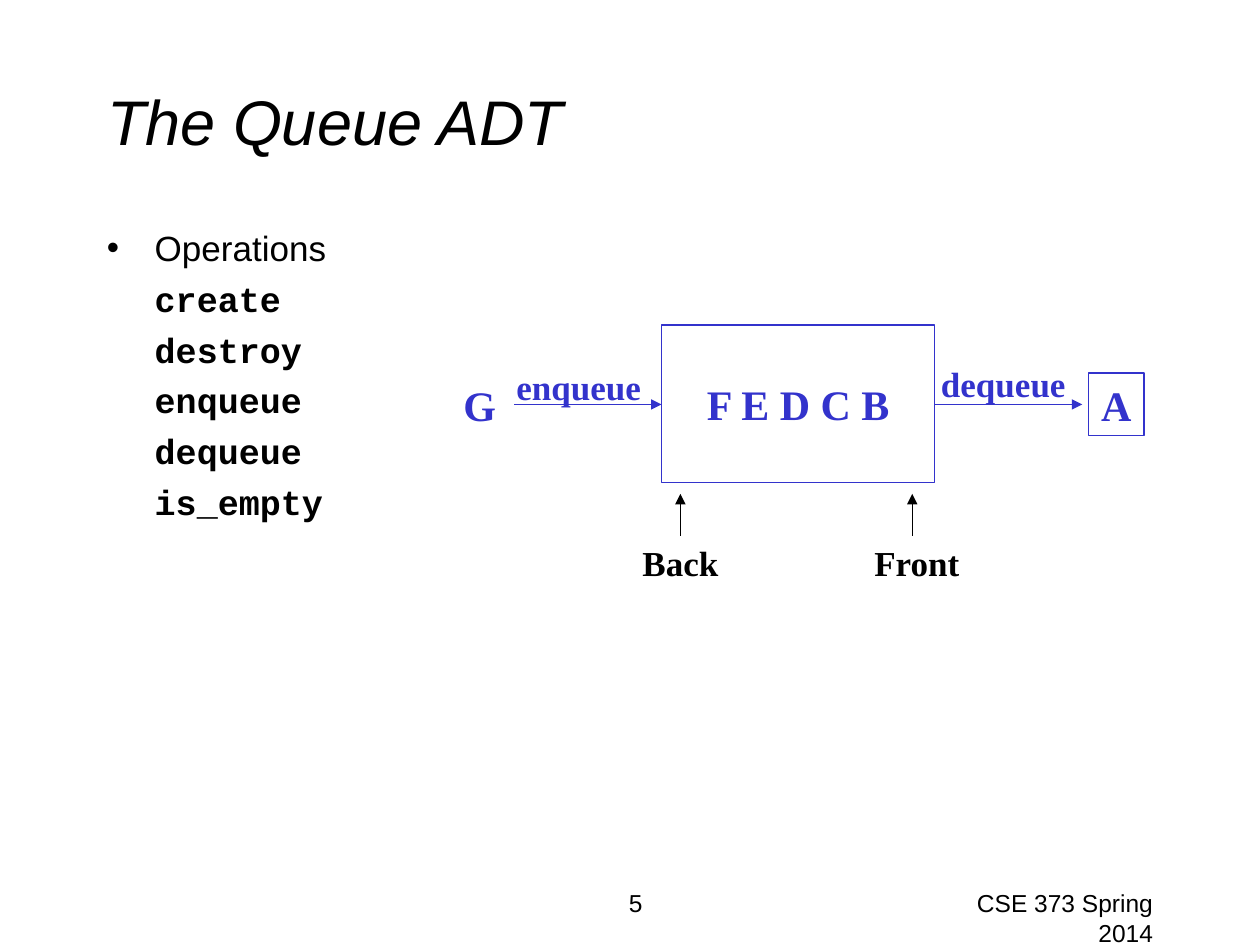
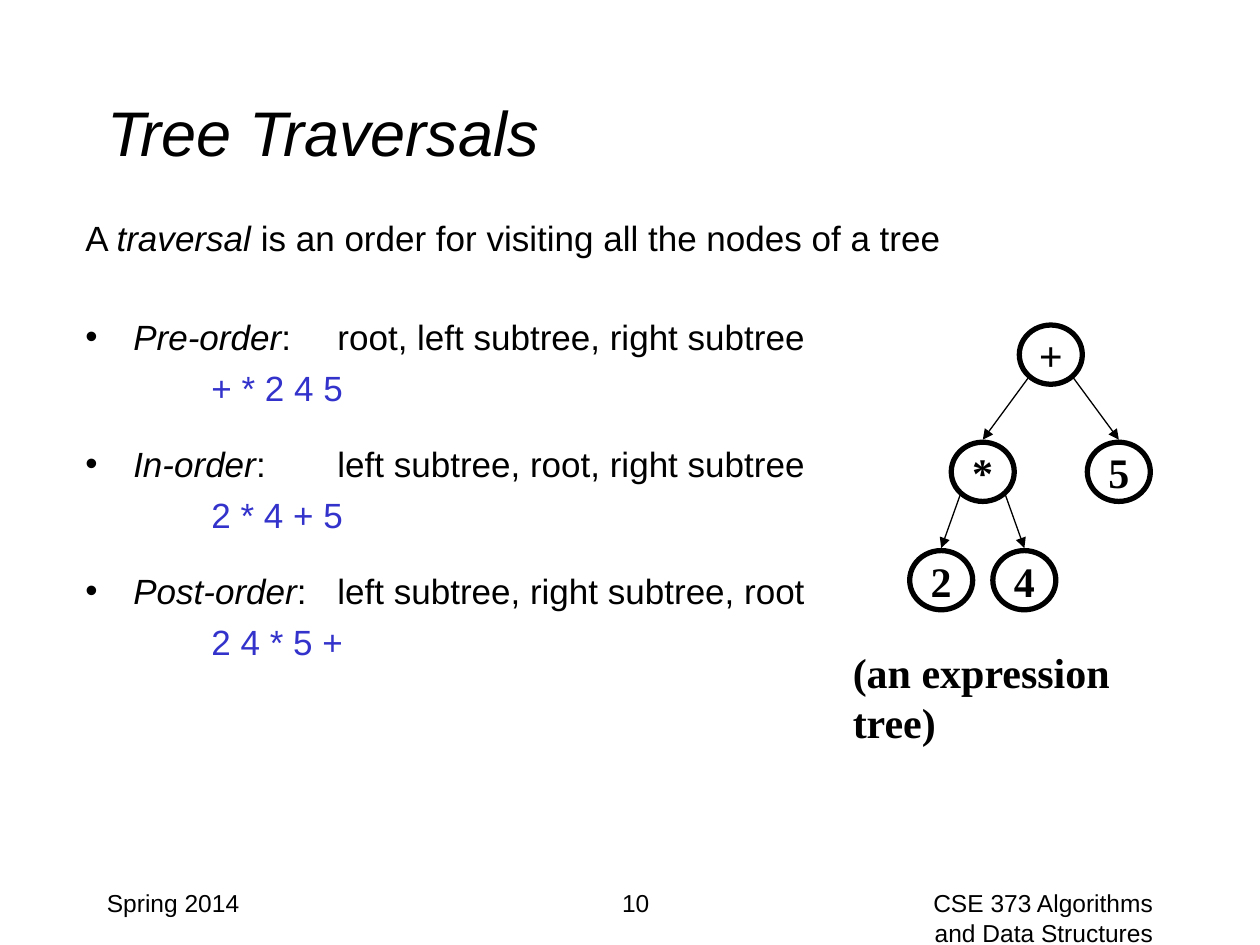
from lxml import etree
from pptx import Presentation
from pptx.dml.color import RGBColor
from pptx.enum.shapes import MSO_CONNECTOR, MSO_SHAPE
from pptx.enum.text import MSO_ANCHOR, MSO_AUTO_SIZE, PP_ALIGN
from pptx.oxml.ns import qn
from pptx.util import Inches, Pt

LEFT, MID, RIGHT = PP_ALIGN.LEFT, PP_ALIGN.CENTER, PP_ALIGN.RIGHT
TOP, CENTRE = MSO_ANCHOR.TOP, MSO_ANCHOR.MIDDLE
RECT, OVAL = MSO_SHAPE.RECTANGLE, MSO_SHAPE.OVAL
STRAIGHT, GROW = MSO_CONNECTOR.STRAIGHT, MSO_AUTO_SIZE.SHAPE_TO_FIT_TEXT

COLORS = {"ink": "000000", "blue": "3333CC"}
SANS, SERIF, MONO = "Arial", "Times New Roman", "Courier New"


def color(name):
    return RGBColor.from_string(COLORS[name])


def write(par, text, font=SANS, size=20, ink="ink", bold=False, italic=False,
          align=LEFT):
    """Add one formatted run to a paragraph."""
    par.alignment = align
    run = par.add_run()
    run.text = text
    face = run.font
    face.name, face.size = font, Pt(size)
    face.bold, face.italic = bold, italic
    face.color.rgb = color(ink)


class Deck:
    def __init__(self):
        self.prs = Presentation()
        self.prs.slide_width, self.prs.slide_height = Inches(10), Inches(7.5)
        self.slide = None

    def start(self, title, top, height):
        """Open a slide and set its title."""
        self.slide = self.prs.slides.add_slide(self.prs.slide_layouts[5])
        head = self.slide.shapes.title
        head.left, head.top = Inches(0.75), Inches(top)
        head.width, head.height = Inches(8.5), Inches(height)
        head.text_frame.vertical_anchor = CENTRE
        write(head.text_frame.paragraphs[0], title, size=36, italic=True)

    def box(self, x, y, w, h):
        shape = self.slide.shapes.add_textbox(
            Inches(x), Inches(y), Inches(w), Inches(h))
        shape.text_frame.word_wrap = True
        return shape.text_frame

    def label(self, text, x, y, w, h=0.44, wrap=False, **fmt):
        frame = self.box(x, y, w, h)
        frame.word_wrap = wrap
        frame.auto_size = GROW
        write(frame.paragraphs[0], text, font=SERIF, bold=True, **fmt)

    def body(self, x, y, w, h, rows):
        """Fill a text box; a row is (runs, indent, hang, gap, bullet)."""
        frame = self.box(x, y, w, h)
        for i, (runs, indent, hang, gap, bullet) in enumerate(rows):
            par = frame.add_paragraph() if i else frame.paragraphs[0]
            par.space_before = Pt(gap)
            for text, fmt in runs:
                write(par, text, **fmt)
            props = par._p.get_or_add_pPr()
            props.set("marL", str(Inches(indent)))
            props.set("indent", str(-Inches(hang)))
            props.set("defTabSz", str(Inches(1)))
            if bullet:
                etree.SubElement(props, qn("a:buFont")).set("typeface", SANS)
                etree.SubElement(props, qn("a:buChar")).set("char", "•")

    def shape(self, kind, text, x, y, w, h, ink, line, anchor=CENTRE):
        item = self.slide.shapes.add_shape(
            kind, Inches(x), Inches(y), Inches(w), Inches(h))
        item.shadow.inherit = False
        item.fill.background()
        item.line.color.rgb = color(ink)
        item.line.width = Pt(line)
        frame = item.text_frame
        frame.word_wrap, frame.vertical_anchor = False, anchor
        write(frame.paragraphs[0], text, font=SERIF, size=24, ink=ink,
              bold=True, align=MID)

    def arrow(self, x1, y1, x2, y2, ink="ink"):
        item = self.slide.shapes.add_connector(
            STRAIGHT, Inches(x1), Inches(y1), Inches(x2), Inches(y2))
        item.line.color.rgb = color(ink)
        item.line.width = Pt(0.75)
        line = item.line._get_or_add_ln()
        etree.SubElement(line, qn("a:tailEnd")).set("type", "triangle")
        etree.SubElement(item._element.spPr, qn("a:effectLst"))

    def footer(self, number, course, date=None):
        parts = [(date, 0.75, 2.08, LEFT), (number, 3.17, 3.75, MID),
                 (course, 7.17, 2.08, RIGHT)]
        for text, x, w, align in parts:
            if text:
                frame = self.box(x, 7, w, 0.5)
                write(frame.paragraphs[0], text, size=14, align=align)


def queue(deck):
    deck.start("The Queue ADT", 0.33, 1.25)

    # Operations list
    code = {"font": MONO, "bold": True}
    names = ["create", "destroy", "enqueue", "dequeue", "is_empty"]
    rows = [([("Operations", {})], 0.38, 0.38, 5, True)]
    rows += [([(name, code)], 0.38, 0, 5, False) for name in names]
    deck.body(0.75, 1.75, 8.5, 4.92, rows)

    # Queue with its input and output
    deck.shape(RECT, "F E D C B", 5.25, 2.58, 2.17, 1.25, "blue", 0.75)
    deck.shape(RECT, "A", 8.64, 2.96, 0.44, 0.5, "blue", 0.75, TOP)
    deck.label("G", 3.58, 2.96, 0.46, 0.5, size=24, ink="blue")
    deck.label("enqueue", 4, 2.85, 1.2, ink="blue")
    deck.label("dequeue", 7.37, 2.83, 1.2, ink="blue")
    for x in (4.08, 7.42):
        deck.arrow(x, 3.21, x + 1.17, 3.21, "blue")

    # Markers of both ends
    for text, x, w in (("Back", 5, 0.81), ("Front", 6.84, 0.89)):
        deck.label(text, x, 4.25, w)
        deck.arrow(x + 0.4, 4.25, x + 0.4, 3.92)

    deck.footer("5", "CSE 373 Spring 2014")


def tree(deck):
    deck.start("Tree Traversals", 0.25, 1.58)

    # Definition and the three orders
    slant = {"italic": True}
    rows = [([("A ", {}), ("traversal", slant),
              (" is an order for visiting all the nodes of a tree", {})],
             0.38, 0.38, 5, False)]
    orders = [("Pre-order", "root, left subtree, right subtree", "+ * 2 4 5", 32.5),
              ("In-order", "left subtree, root, right subtree", "2 * 4 + 5", 19.5),
              ("Post-order", "left subtree, right subtree, root", "2 4 * 5 +", 19.5)]
    for name, steps, result, gap in orders:
        rows.append(([(name, slant), (":\t" + steps, {})], 0.38, 0.38, gap, True))
        rows.append(([(result, {"ink": "blue"})], 1, 0, 5, False))
    deck.body(0.58, 1.67, 7.17, 5.08, rows)

    # Expression tree: text, centre, top, parent
    nodes = [("+", 8.34, 2.58, None), ("*", 7.8, 3.51, 0), ("5", 8.88, 3.51, 0),
             ("2", 7.47, 4.37, 1), ("4", 8.13, 4.37, 1)]
    for text, x, y, up in nodes:
        deck.shape(OVAL, text, x - 0.25, y, 0.5, 0.47, "ink", 3)
        if up is not None:
            px, py = nodes[up][1:3]
            side = 0.18 if x > px else -0.18
            deck.arrow(px + side, py + 0.42, x, y - 0.02)
    deck.label("(an expression tree)", 6.67, 5.08, 2.83, 0.5, wrap=True, size=24)

    deck.footer("10", "CSE 373 Algorithms and Data Structures", "Spring 2014")


def main():
    deck = Deck()
    queue(deck)
    tree(deck)
    deck.prs.save("out.pptx")


if __name__ == "__main__":
    main()
